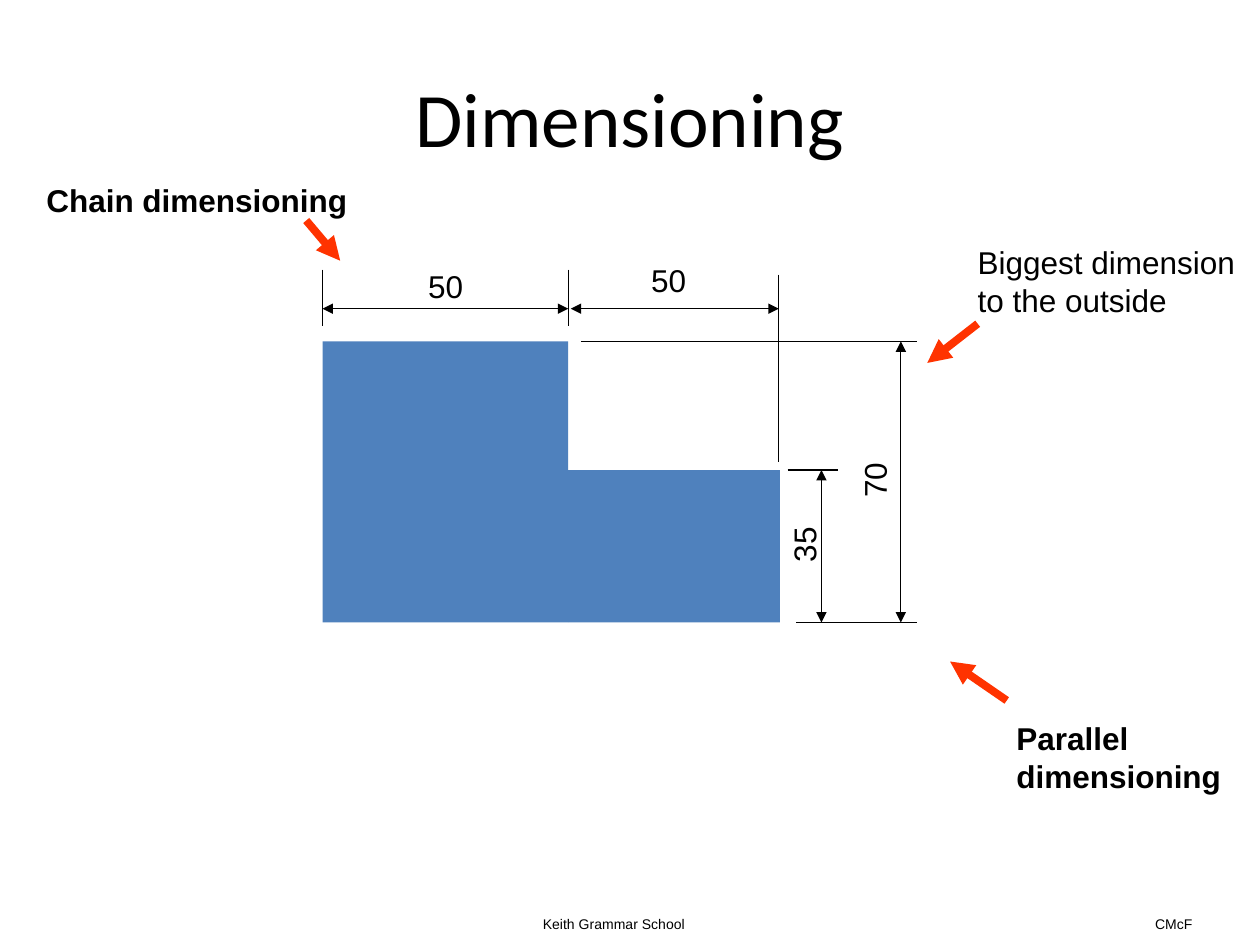
from lxml import etree
from pptx import Presentation
from pptx.dml.color import RGBColor
from pptx.enum.shapes import MSO_CONNECTOR, MSO_SHAPE
from pptx.enum.text import MSO_ANCHOR, MSO_AUTO_SIZE, PP_ALIGN
from pptx.oxml.ns import qn
from pptx.util import Pt

STRAIGHT = MSO_CONNECTOR.STRAIGHT
RECTANGLE = MSO_SHAPE.RECTANGLE
MIDDLE = MSO_ANCHOR.MIDDLE
FIT_SHAPE = MSO_AUTO_SIZE.SHAPE_TO_FIT_TEXT
CENTER = PP_ALIGN.CENTER

BLACK = "000000"
BLUE = "4F81BD"
RED = "FF3300"
LABEL_SIZE = (34.6, 28.8)


def color(hex_string):
    return RGBColor.from_string(hex_string)


def add_run(paragraph, text, size, font_name="Arial", bold=False):
    run = paragraph.add_run()
    run.text = text
    run.font.name = font_name
    run.font.size = Pt(size)
    run.font.bold = bold
    run.font.color.rgb = color(BLACK)


def add_text(slide, box, lines, size=18, bold=False, rotation=0):
    shape = slide.shapes.add_textbox(*map(Pt, box))
    shape.rotation = rotation
    frame = shape.text_frame
    frame.word_wrap = False
    frame.auto_size = FIT_SHAPE
    for index, line in enumerate(lines):
        paragraph = frame.add_paragraph() if index else frame.paragraphs[0]
        add_run(paragraph, line, size, bold=bold)


def add_line(slide, origin, start, end, hex_string=BLACK, width=0.75, arrows=()):
    left, top = origin
    connector = slide.shapes.add_connector(
        STRAIGHT, Pt(left + start[0]), Pt(top + start[1]),
        Pt(left + end[0]), Pt(top + end[1]))
    connector.line.color.rgb = color(hex_string)
    connector.line.width = Pt(width)
    properties = connector.element.spPr
    line = properties.find(qn("a:ln"))
    for arrow in arrows:
        etree.SubElement(line, qn(f"a:{arrow}")).set("type", "triangle")
    etree.SubElement(properties, qn("a:effectLst"))


def add_title(slide, box, text):
    title = slide.shapes.title
    title.left, title.top, title.width, title.height = map(Pt, box)
    title.text_frame.vertical_anchor = MIDDLE
    paragraph = title.text_frame.paragraphs[0]
    paragraph.alignment = CENTER
    add_run(paragraph, text, 44, "Calibri")


def add_block(slide, box):
    block = slide.shapes.add_shape(RECTANGLE, *map(Pt, box))
    block.shadow.inherit = False
    block.fill.solid()
    block.fill.fore_color.rgb = color(BLUE)
    block.line.fill.background()


def add_drawing(slide, box):
    left, top, width, height = box
    origin = (left, top)
    step, shoulder = 140.4, 73.5
    chain, inner, outer = -18.7, 285.1, 330.5

    add_block(slide, (left, top, step, height))
    add_block(slide, (left + step, top + shoulder, width - step, height - shoulder))

    extension_lines = [
        ((0, -41), (0, -8.6)),
        ((step, -41), (step, -8.6)),
        ((width - 0.7, -38.1), (width - 0.7, 69.1)),
        ((147.6, 0), (339.9, 0)),
        ((265.7, shoulder), (294.5, shoulder)),
        ((270.7, height), (294.5, height)),
        ((288.7, height), (339.9, height)),
    ]
    for start, end in extension_lines:
        add_line(slide, origin, start, end)

    dimensions = [
        ((0, chain), (step, chain), "50", (53.3, -46.1), 0),
        ((step + 1.5, chain), (width - 0.7, chain), "50", (180.7, -49.7), 0),
        ((inner, shoulder), (inner, height), "35", (257.8, 101.5), 270),
        ((outer, 0), (outer, height), "70", (298.1, 64.8), 270),
    ]
    for start, end, value, (x, y), rotation in dimensions:
        add_line(slide, origin, start, end, arrows=("headEnd", "tailEnd"))
        add_text(slide, (left + x, top + y, *LABEL_SIZE), [value], rotation=rotation)


def add_callout(slide, box, lines, start, end, bold):
    add_text(slide, box, lines, bold=bold)
    add_line(slide, box[:2], start, end, RED, 4.5, ("tailEnd",))


def add_footer(slide, box):
    left, top, width, height = box
    add_text(slide, (left, top, 95.8, height), ["Keith Grammar School"], 8)
    add_text(slide, (left + width - 36, top, 36, height), ["CMcF"], 8)


def main():
    presentation = Presentation()
    presentation.slide_width = Pt(720)
    presentation.slide_height = Pt(540)
    slide = presentation.slides.add_slide(presentation.slide_layouts[5])

    add_footer(slide, (303.1, 519.8, 385.9, 16.6))
    add_title(slide, (36, 21.6, 648, 90), "Dimensioning")
    add_drawing(slide, (184.3, 195.1, 261.4, 160.6))
    add_callout(slide, (19.4, 100.1, 186.5, 28.8), ["Chain dimensioning"],
                (155.6, 25.9), (175, 48.9), True)
    add_callout(slide, (551.5, 135.4, 166.3, 50.4),
                ["Biggest dimension", "to the outside"],
                (7.2, 49.6), (-21.6, 72), False)
    add_callout(slide, (573.8, 407.5, 131.8, 50.4), ["Parallel", "dimensioning"],
                (1.5, -7.2), (-30.9, -29.5), True)
    presentation.save("out.pptx")


if __name__ == "__main__":
    main()
